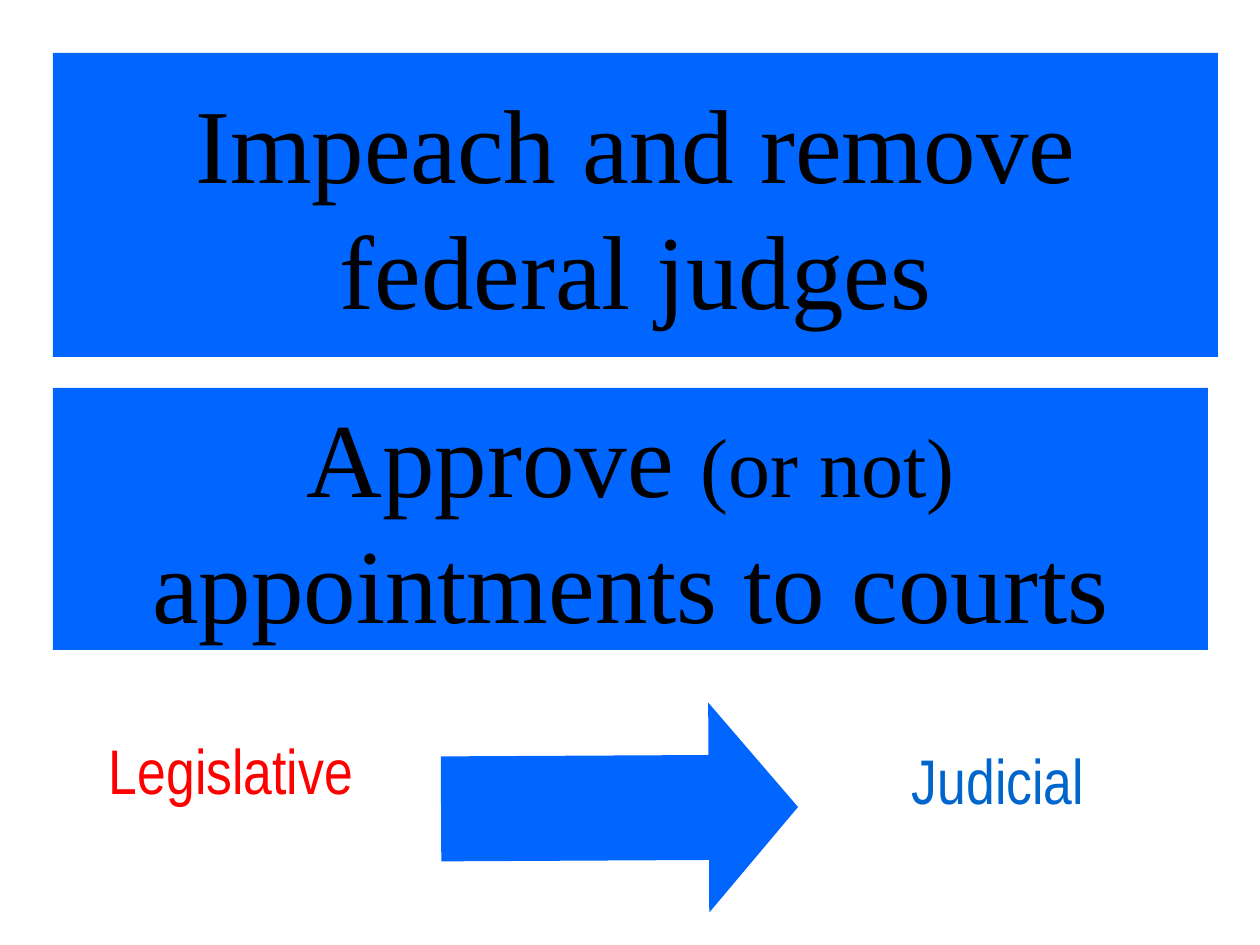
from dataclasses import dataclass

from pptx import Presentation
from pptx import util as u
from pptx.dml.color import RGBColor
from pptx.enum import shapes, text

PX_PER_INCH = 126


@dataclass(frozen=True)
class Theme:
    blue: str = "0066FF"
    ink: str = "000000"
    legislative: str = "FF0000"
    judicial: str = "0066CC"
    banner_font: str = "Times New Roman"
    label_font: str = "Arial Narrow"
    banner_size: int = 60
    aside_size: int = 48
    label_size: int = 36


THEME = Theme()


def px(*lengths):
    return [u.Inches(length / PX_PER_INCH) for length in lengths]


def fill_plain(shape, color):
    shape.fill.solid()
    shape.fill.fore_color.rgb = RGBColor.from_string(color)
    shape.line.fill.background()


def write(shape, lines, *, font, size, color, anchor):
    """Each line is a list of (wording, size) runs; None means the usual size."""
    frame = shape.text_frame
    frame.word_wrap = True
    frame.auto_size = text.MSO_AUTO_SIZE.NONE
    frame.vertical_anchor = anchor
    for index, runs in enumerate(lines):
        paragraph = frame.add_paragraph() if index else frame.paragraphs[0]
        paragraph.alignment = text.PP_ALIGN.CENTER
        for wording, own_size in runs:
            run = paragraph.add_run()
            run.text = wording
            run.font.name = font
            run.font.size = u.Pt(own_size or size)
            run.font.color.rgb = RGBColor.from_string(color)


def format_banner(banner, lines):
    fill_plain(banner, THEME.blue)
    write(banner, lines, font=THEME.banner_font, size=THEME.banner_size,
          color=THEME.ink, anchor=text.MSO_ANCHOR.MIDDLE)


def add_title_banner(slide, box, lines):
    title = slide.shapes.title
    title.left, title.top, title.width, title.height = px(*box)
    format_banner(title, lines)


def add_banner(slide, box, lines):
    banner = slide.shapes.add_shape(shapes.MSO_SHAPE.RECTANGLE, *px(*box))
    banner.shadow.inherit = False
    format_banner(banner, lines)


def add_branch_label(slide, box, wording, color):
    label = slide.shapes.add_textbox(*px(*box))
    write(label, [[(wording, None)]], font=THEME.label_font,
          size=THEME.label_size, color=color, anchor=text.MSO_ANCHOR.TOP)


def add_check_arrow(slide, box):
    arrow = slide.shapes.add_shape(shapes.MSO_SHAPE.RIGHT_ARROW, *px(*box))
    arrow.shadow.inherit = False
    arrow.adjustments[0] = 0.5
    arrow.adjustments[1] = 0.425
    arrow.rotation = 359.7
    fill_plain(arrow, THEME.blue)


def main():
    deck = Presentation()
    deck.slide_width, deck.slide_height = px(1260, 945)
    slide = deck.slides.add_slide(deck.slide_layouts.get_by_name("Title Only"))

    # Branches: who checks whom
    add_branch_label(slide, (42, 725, 378, 189), "Legislative", THEME.legislative)
    add_branch_label(slide, (809, 735, 378, 163), "Judicial", THEME.judicial)
    add_check_arrow(slide, (441, 703, 357, 210))

    # Powers over the courts
    add_title_banner(slide, (53, 53, 1165, 304), [
        [("Impeach and remove", None)],
        [("federal judges", None)],
    ])
    add_banner(slide, (53, 388, 1155, 262), [
        [("Approve ", None), ("(or not)", THEME.aside_size)],
        [("appointments to courts", None)],
    ])

    deck.save("out.pptx")


if __name__ == "__main__":
    main()
